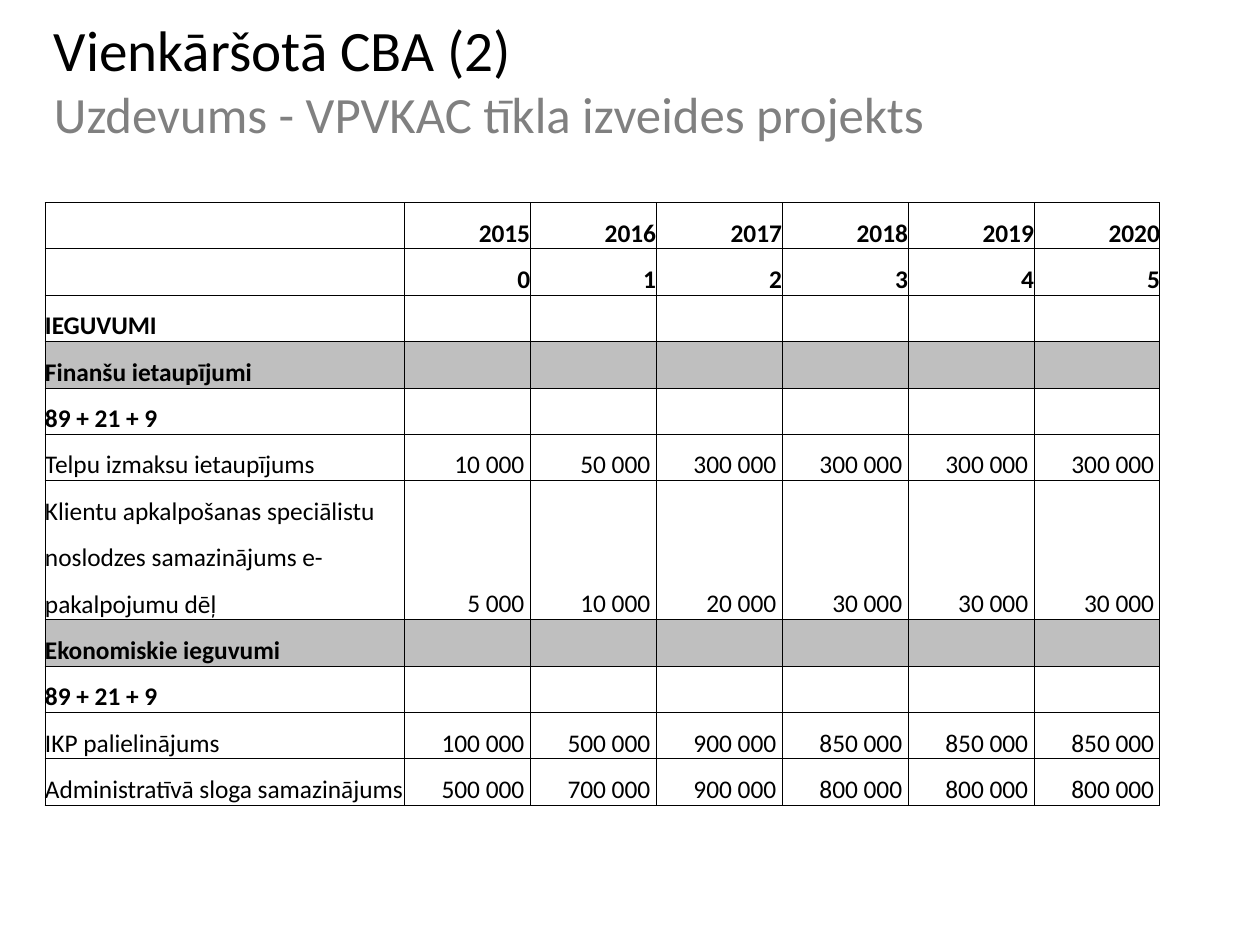
from lxml import etree
from pptx import Presentation
from pptx.dml.color import RGBColor
from pptx.enum.text import MSO_ANCHOR, PP_ALIGN
from pptx.oxml.ns import qn
from pptx.util import Cm, Pt

TOP, MIDDLE, BOTTOM = MSO_ANCHOR.TOP, MSO_ANCHOR.MIDDLE, MSO_ANCHOR.BOTTOM
LEFT, RIGHT = PP_ALIGN.LEFT, PP_ALIGN.RIGHT
FONT = "Calibri"
BLACK, WHITE, GREY, BAND = "000000", "FFFFFF", "808080", "BFBFBF"
THOUSANDS_GAP = " "
LINE_HEIGHT = 1.03
LABEL_WIDTH, YEAR_WIDTH = 7.98, 2.8

YEARS = range(2015, 2021)
BENEFITS = [
    ("IEGUVUMI", []),
    ("Finanšu ietaupījumi", []),
    ("89 + 21 + 9", []),
    ("Telpu izmaksu ietaupījums", [10, 50, 300, 300, 300, 300]),
    ("Klientu apkalpošanas speciālistu noslodzes samazinājums e-pakalpojumu dēļ",
     [5, 10, 20, 30, 30, 30]),
    ("Ekonomiskie ieguvumi", []),
    ("89 + 21 + 9", []),
    ("IKP palielinājums", [100, 500, 900, 850, 850, 850]),
    ("Administratīvā sloga samazinājums", [500, 700, 900, 800, 800, 800]),
]
SECTIONS = ("Finanšu ietaupījumi", "Ekonomiskie ieguvumi")
THREE_LINE_ROW = 6


def rgb(value):
    """Turn a hex string into a colour."""
    return RGBColor.from_string(value)


def add_run(paragraph, text, size, color=BLACK, bold=False):
    """Append one formatted run."""
    run = paragraph.add_run()
    run.text = text
    run.font.name = FONT
    run.font.size = Pt(size)
    run.font.bold = bold
    run.font.color.rgb = rgb(color)


def clear_margins(holder):
    """Remove the inner margins of a cell or text frame."""
    holder.margin_left = holder.margin_right = 0
    holder.margin_top = holder.margin_bottom = 0


def add_title(slide, heading, subtitle):
    """Add the two-line slide title."""
    frame = slide.shapes.add_textbox(Cm(1.2), 0, Cm(25.2), Cm(3.5)).text_frame
    frame.word_wrap = True
    frame.vertical_anchor = MIDDLE
    clear_margins(frame)
    paragraph = frame.paragraphs[0]
    paragraph.line_spacing = 1.01
    add_run(paragraph, heading, 36)
    paragraph.add_line_break()
    add_run(paragraph, subtitle, 32, GREY)


def add_borders(cell):
    """Draw a thin black line on each side of a cell."""
    properties = cell._tc.get_or_add_tcPr()
    for side in ("a:lnL", "a:lnR", "a:lnT", "a:lnB"):
        line = etree.SubElement(properties, qn(side), w=str(Pt(0.5)))
        fill = etree.SubElement(line, qn("a:solidFill"))
        etree.SubElement(fill, qn("a:srgbClr"), val=BLACK)


def fill_cell(cell, text, color, bold, align, anchor):
    """Style a cell and write its text."""
    clear_margins(cell)
    cell.vertical_anchor = anchor
    add_borders(cell)
    cell.fill.solid()
    cell.fill.fore_color.rgb = rgb(color)
    paragraph = cell.text_frame.paragraphs[0]
    paragraph.alignment = align
    if text:
        paragraph.line_spacing = 1.5
        add_run(paragraph, text, 16, bold=bold)
    else:
        paragraph.font.size = Pt(16)


def format_amount(thousands):
    """Write an amount given in thousands with a grouped format."""
    return f" {thousands * 1000:,} ".replace(",", THOUSANDS_GAP)


def table_rows():
    """List the label, year texts and weight of every table row."""
    rows = [("", [str(year) for year in YEARS], True),
            ("", [str(year - YEARS[0]) for year in YEARS], True)]
    for label, amounts in BENEFITS:
        texts = [format_amount(amount) for amount in amounts]
        rows.append((label, texts or [""] * len(YEARS), not amounts))
    return rows


def add_benefit_table(slide):
    """Add the table of benefits by year."""
    rows = table_rows()
    heights = [LINE_HEIGHT * (3 if index == THREE_LINE_ROW else 1)
               for index in range(len(rows))]
    widths = [LABEL_WIDTH] + [YEAR_WIDTH] * len(YEARS)
    table = slide.shapes.add_table(len(rows), len(widths), Cm(1), Cm(4.5),
                                   Cm(sum(widths)), Cm(sum(heights))).table
    table.first_row = table.horz_banding = False
    for column, width in zip(table.columns, widths):
        column.width = Cm(width)
    for index, (label, texts, bold) in enumerate(rows):
        table.rows[index].height = Cm(heights[index])
        color = BAND if label in SECTIONS else WHITE
        fill_cell(table.cell(index, 0), label, color, bold, LEFT, TOP)
        for column, text in enumerate(texts, 1):
            fill_cell(table.cell(index, column), text, color, bold, RIGHT, BOTTOM)


def main():
    """Build and save the slide."""
    presentation = Presentation()
    presentation.slide_width, presentation.slide_height = Cm(28), Cm(21)
    slide = presentation.slides.add_slide(presentation.slide_layouts[6])
    add_title(slide, "Vienkāršotā CBA (2)", "Uzdevums - VPVKAC tīkla izveides projekts")
    add_benefit_table(slide)
    presentation.save("out.pptx")


if __name__ == "__main__":
    main()
